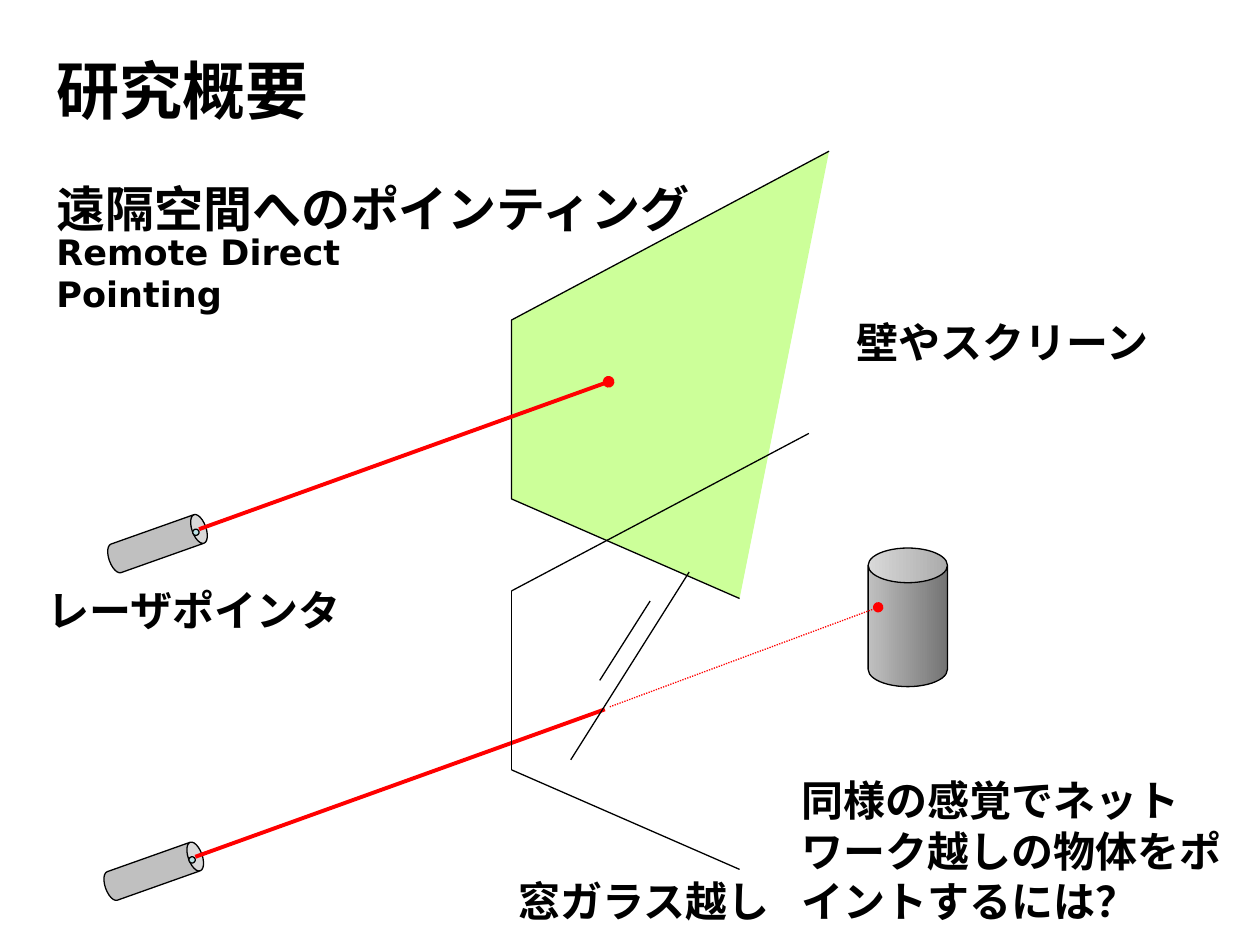
from lxml.etree import SubElement
from pptx import Presentation
from pptx.dml.color import RGBColor
from pptx.enum.dml import MSO_LINE
from pptx.enum.shapes import MSO_CONNECTOR, MSO_SHAPE
from pptx.enum.text import MSO_ANCHOR, MSO_AUTO_SIZE, PP_ALIGN
from pptx.oxml.ns import qn
from pptx.util import Inches, Pt

HUES = {"ink": "000000", "beam": "FF0000", "wall": "CCFF99",
        "case": "C0C0C0", "shade": "747474", "lens": "BBE0E3"}

TITLE = ("研究概要", (0.35, 0.36, 2.76, 0.7))
TEXTS = [
    ("壁やスクリーン", (6.5, 2.46, 2.91, 0.5), {"align": PP_ALIGN.CENTER}),
    ("レーザポインタ", (0.2, 4.59, 2.68, 0.5), {"align": PP_ALIGN.CENTER}),
    ("窓ガラス越し", (3.98, 6.9, 2.26, 0.5), {"align": PP_ALIGN.CENTER}),
    ("同様の感覚でネットワーク越しの物体をポイントするには？", (6.26, 6.1, 3.62, 1.3), {}),
    ("遠隔空間へのポインティング", (0.35, 1.37, 5.28, 0.57), {"size": 28}),
    ("Remote Direct Pointing", (0.35, 1.78, 3.8, 0.43),
     {"size": 20, "face": "DejaVu Sans"}),
]
WALL = [(6.58, 1.2), (4.06, 2.54), (4.06, 3.96), (5.87, 4.75)]
PANE = [
    ((4.06, 4.69), (4.06, 6.11)),
    ((4.06, 6.11), (5.87, 6.9)),
    ((4.06, 4.69), (6.42, 3.44)),
    ((5.16, 4.77), (4.76, 5.4)),
    ((5.47, 4.54), (4.53, 6.03)),
]
TARGET = (6.89, 4.35, 0.63, 1.1)
LASERS = [(1.13, 3.91, True), (1.1, 6.51, False)]
TRACE = ((4.84, 5.61), (6.97, 4.82))


def color(name):
    return RGBColor.from_string(HUES[name])


def write(frame, text, size=24, face="Arial", align=PP_ALIGN.LEFT):
    frame.word_wrap = True
    frame.vertical_anchor = MSO_ANCHOR.TOP
    frame.auto_size = MSO_AUTO_SIZE.SHAPE_TO_FIT_TEXT
    para = frame.paragraphs[0]
    para.alignment = align
    run = para.add_run()
    run.text = text
    run.font.size = Pt(size)
    run.font.name = face
    run.font.bold = True
    run.font.color.rgb = color("ink")


def paint(shape, fill):
    shape.shadow.inherit = False
    shape.fill.solid()
    shape.fill.fore_color.rgb = color(fill)
    shape.line.color.rgb = color("ink")
    shape.line.width = Pt(0.75)


def solid(shapes, kind, box, fill, turn=0, depth=None):
    shape = shapes.add_shape(kind, *map(Inches, box))
    paint(shape, fill)
    shape.rotation = turn
    if depth:
        shape.adjustments[0] = depth
    return shape


def rule(shapes, start, end, hue="ink", width=0.75, dash=None, dot=False):
    line = shapes.add_connector(MSO_CONNECTOR.STRAIGHT, *map(Inches, start + end))
    line.line.color.rgb = color(hue)
    line.line.width = Pt(width)
    if dash:
        line.line.dash_style = dash
    props = line._element.spPr
    if dot:
        SubElement(props.find(qn("a:ln")), qn("a:tailEnd"), type="oval")
    SubElement(props, qn("a:effectLst"))


def laser(shapes, left, top, dot):
    solid(shapes, MSO_SHAPE.CAN, (left, top, 0.24, 0.81), "case", 70.5, 0.465)
    solid(shapes, MSO_SHAPE.OVAL, (left + 0.4, top + 0.29, 0.05, 0.05), "lens", 15.5)
    rule(shapes, (left + 0.45, top + 0.29), (left + 3.7, top - 0.88),
         "beam", 2.25, dot=dot)


def main():
    deck = Presentation()
    deck.slide_width, deck.slide_height = Inches(10), Inches(7.5)
    slide = deck.slides.add_slide(deck.slide_layouts[5])
    shapes = slide.shapes

    text, box = TITLE
    title = shapes.title
    title.left, title.top, title.width, title.height = map(Inches, box)
    write(title.text_frame, text, size=36)

    can = solid(shapes, MSO_SHAPE.CAN, TARGET, "case", depth=0.437)
    can.fill.gradient()
    can.fill.gradient_angle = 0
    for stop, hue in zip(can.fill.gradient_stops, ("case", "shade")):
        stop.color.rgb = color(hue)

    points = [tuple(map(Inches, point)) for point in WALL]
    pen = shapes.build_freeform(*points[0])
    pen.add_line_segments(points[1:], close=False)
    paint(pen.convert_to_shape(), "wall")

    for spot in LASERS:
        laser(shapes, *spot)
    rule(shapes, *TRACE, hue="beam", dash=MSO_LINE.ROUND_DOT, dot=True)
    for start, end in PANE:
        rule(shapes, start, end)

    for text, box, style in TEXTS:
        write(shapes.add_textbox(*map(Inches, box)).text_frame, text, **style)

    deck.save("out.pptx")


if __name__ == "__main__":
    main()
